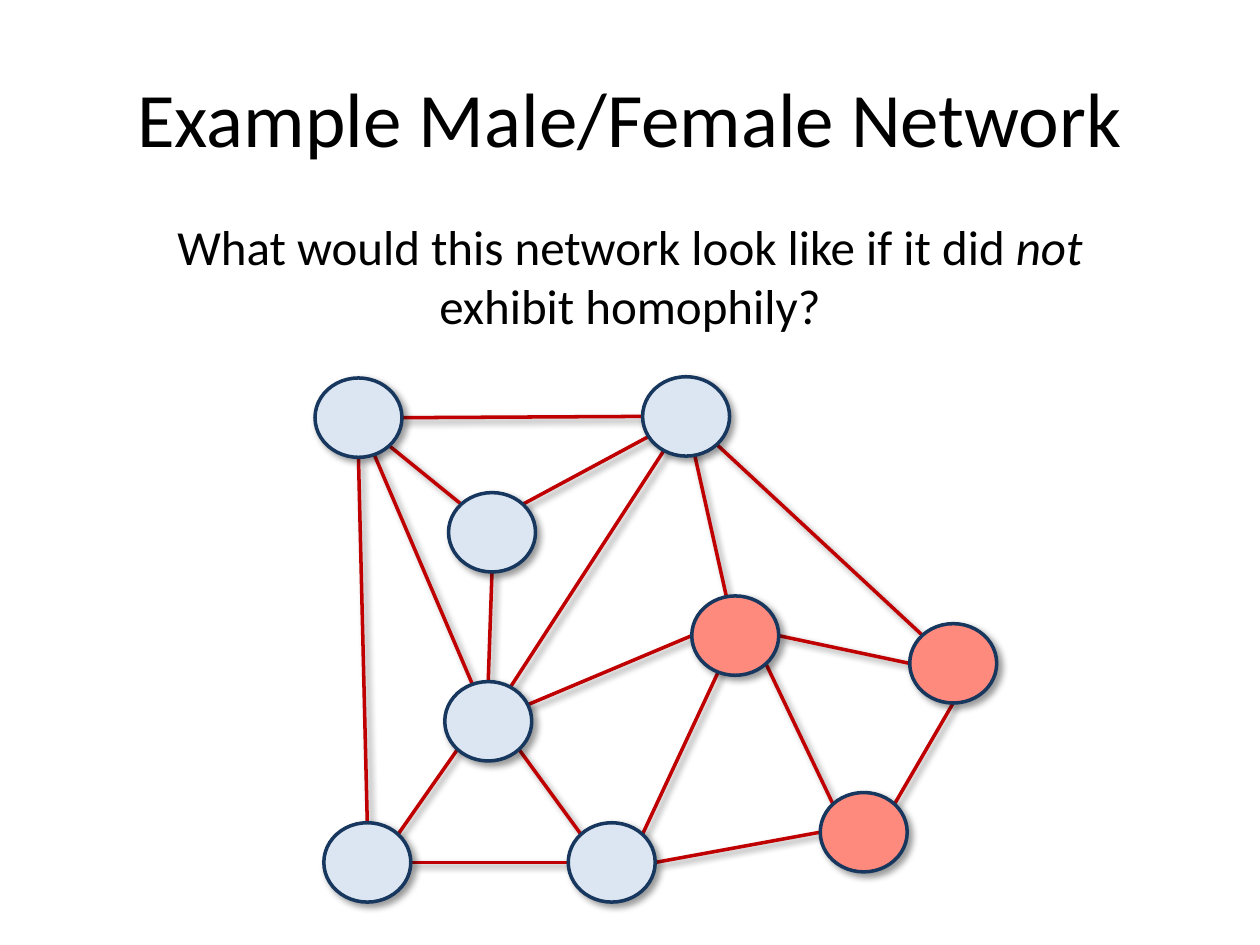
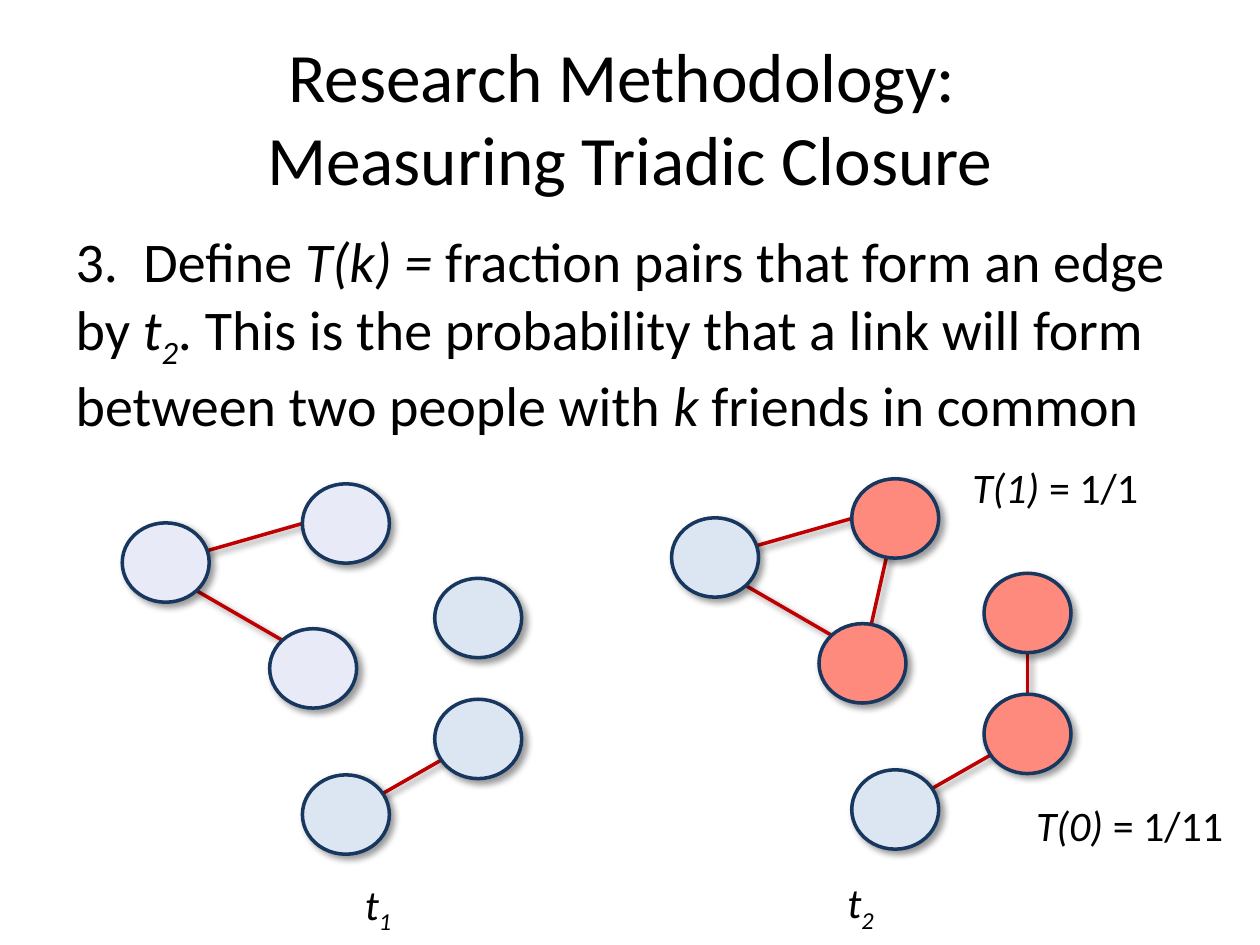
from typing import NamedTuple

from pptx import Presentation
from pptx.dml.color import RGBColor as Rgb
from pptx.enum.shapes import MSO_CONNECTOR as Link, MSO_SHAPE as Form
from pptx.enum.text import MSO_ANCHOR as Anchor, MSO_AUTO_SIZE as Fit, PP_ALIGN as Align
from pptx.oxml import parse_xml
from pptx.oxml.ns import nsdecls
from pptx.util import Inches, Pt

# Shared look; the grid has 100 columns and 75 rows on each slide
COLORS = {"text": "000000", "edge": "C00000", "rim": "17375E",
          "male": "DCE6F2", "female": "FE8A7E", "triad": "E9EAF7", "shade": "000000"}
FONT = "Calibri"
COLS, ROWS, CELL = 100, 75, 0.1
NODE_W, NODE_H = 6.9, 6.3
STROKE = 2
DIAG = 0.5 ** 0.5

# Ports on a node's rim, as directions from its centre
PORTS = {"c": (0, 0), "n": (0, -1), "e": (1, 0), "s": (0, 1), "w": (-1, 0),
         "ne": (DIAG, -DIAG), "se": (DIAG, DIAG), "sw": (-DIAG, DIAG), "nw": (-DIAG, -DIAG)}


class Box(NamedTuple):
    col: float
    row: float
    wide: float
    high: float


class Node(NamedTuple):
    col: float
    row: float
    fill: str = "male"

    def port(self, name: str) -> tuple[float, float]:
        dx, dy = PORTS[name]
        return self.col + NODE_W / 2 * (1 + dx), self.row + NODE_H / 2 * (1 + dy)


class Span(NamedTuple):
    text: str
    style: str = ""  # "i" italic, "sub" italic subscript


class Label(NamedTuple):
    box: Box
    spans: list[Span]


TITLE = Box(5, 3, 90, 12.5)

# Slide 1: people and their ties; an edge reads "node.port node.port"
PEOPLE = {
    "a": Node(25, 30), "b": Node(51, 29.9), "c": Node(35.6, 39.1),
    "d": Node(35.3, 54.1), "e": Node(25.7, 65.3), "f": Node(45.1, 65.3),
    "g": Node(54.9, 47.3, "female"), "h": Node(72.2, 49.5, "female"),
    "i": Node(65.1, 62.9, "female"),
}
TIES = ["d.c a.c", "c.nw a.se", "f.w e.e", "f.ne g.c", "b.w a.e", "e.n a.s",
        "g.c b.c", "c.ne b.c", "c.s d.n", "d.sw e.ne", "f.nw d.se", "d.c b.c",
        "h.nw b.se", "h.w g.e", "g.se i.nw", "h.s i.ne", "i.w f.e", "d.c g.w"]
QUERY = [Span("What would this network look like if it did "), Span("not", "i"),
         Span(" exhibit homophily?")]

# Slide 2: one layout drawn at two times
SPOTS = {"p": (9.7, 41.5), "q": (21.4, 49.9), "r": (24, 38.4),
         "u": (24, 61.5), "v": (34.5, 55.5), "w": (34.5, 45.9)}
SHIFT = (43.6, -0.4)
OLD_TIES = ["q.nw p.se", "r.w p.c", "u.c v.c"]
NEW_TIES = ["r.c q.c", "v.n w.s"]
DEFINE = [Span("3.  Define "), Span("T(k) = ", "i"),
          Span("fraction pairs that form an edge by "), Span("t", "i"), Span("2", "sub"),
          Span(". This is the probability that a link will form between two people with "),
          Span("k", "i"), Span(" friends in common")]
LABELS = [
    Label(Box(23.3, 69.2, 13.4, 5), [Span("t", "i"), Span("1", "sub")]),
    Label(Box(61.6, 69.1, 13.4, 5), [Span("t", "i"), Span("2", "sub")]),
    Label(Box(75, 36.1, 17.5, 5), [Span("T(1) ", "i"), Span("= 1/1")]),
    Label(Box(80.9, 63, 17.5, 5), [Span("T(0) ", "i"), Span("= 1/11")]),
]


def cells(*sizes: float) -> list[int]:
    return [Inches(size * CELL) for size in sizes]


def tint(name: str) -> Rgb:
    return Rgb.from_string(COLORS[name])


def shade(shape) -> None:
    shape._element.spPr.append(parse_xml(
        f'<a:effectLst {nsdecls("a")}><a:outerShdw blurRad="{Pt(4)}" dist="{Pt(3)}" '
        f'dir="2700000" algn="tl" rotWithShape="0"><a:srgbClr val="{COLORS["shade"]}">'
        '<a:alpha val="40000"/></a:srgbClr></a:outerShdw></a:effectLst>'))


def stroke(shape, name: str) -> None:
    shape.line.color.rgb = tint(name)
    shape.line.width = Pt(STROKE)


def style(run, size: float) -> None:
    run.font.name, run.font.size = FONT, Pt(size)
    run.font.color.rgb = tint("text")


def place(shape, box: Box) -> None:
    shape.left, shape.top, shape.width, shape.height = cells(*box)
    shape.text_frame.word_wrap = True
    shape.text_frame.auto_size = Fit.NONE


def write(para, spans: list[Span], size: float, align: Align) -> None:
    para.alignment = align
    for span in spans:
        run = para.add_run()
        run.text = span.text
        style(run, size)
        run.font.italic = span.style != ""
        if span.style == "sub":
            run._r.get_or_add_rPr().set("baseline", "-25000")


def add_page(deck, title: str, size: float):
    page = deck.slides.add_slide(deck.slide_layouts[1])
    head = page.shapes.title
    place(head, TITLE)
    head.text_frame.vertical_anchor = Anchor.MIDDLE
    head.text_frame.text = title
    para = head.text_frame.paragraphs[0]
    para.alignment = Align.CENTER
    for run in para.runs:
        style(run, size)
    return page


def add_body(page, box: Box, spans: list[Span], size: float, align: Align) -> None:
    body = page.placeholders[1]
    place(body, box)
    para = body.text_frame.paragraphs[0]
    write(para, spans, size, align)
    props = para._p.get_or_add_pPr()
    props.set("marL", "0")
    props.set("indent", "0")
    props.append(parse_xml(f'<a:buNone {nsdecls("a")}/>'))


def add_label(page, label: Label) -> None:
    note = page.shapes.add_textbox(*cells(*label.box))
    note.text_frame.word_wrap = True
    write(note.text_frame.paragraphs[0], label.spans, 24, Align.CENTER)


def add_graph(page, nodes: dict[str, Node], ties: list[str]) -> None:
    # Edges lie under the nodes
    for tie in ties:
        ends = [end.split(".") for end in tie.split()]
        spots = [spot for name, port in ends for spot in nodes[name].port(port)]
        edge = page.shapes.add_connector(Link.STRAIGHT, *cells(*spots))
        stroke(edge, "edge")
        shade(edge)
    for node in nodes.values():
        disc = page.shapes.add_shape(Form.OVAL, *cells(node.col, node.row, NODE_W, NODE_H))
        disc.fill.solid()
        disc.fill.fore_color.rgb = tint(node.fill)
        stroke(disc, "rim")
        shade(disc)


def main() -> None:
    deck = Presentation()
    deck.slide_width, deck.slide_height = cells(COLS, ROWS)

    # Slide 1
    page = add_page(deck, "Example Male/Female Network", 44)
    add_body(page, Box(10, 16.7, 80, 7.5), QUERY, 28, Align.CENTER)
    add_graph(page, PEOPLE, TIES)

    # Slide 2
    page = add_page(deck, "Research Methodology: \vMeasuring Triadic Closure", 39.6)
    add_body(page, Box(5, 17.5, 90, 49.5), DEFINE, 32, Align.LEFT)
    first = {name: Node(col, row, "triad" if name in "pqr" else "male")
             for name, (col, row) in SPOTS.items()}
    later = {name: Node(col + SHIFT[0], row + SHIFT[1], "female" if name in "qrvw" else "male")
             for name, (col, row) in SPOTS.items()}
    add_graph(page, first, OLD_TIES)
    add_graph(page, later, OLD_TIES + NEW_TIES)
    for label in LABELS:
        add_label(page, label)

    deck.save("out.pptx")


if __name__ == "__main__":
    main()
